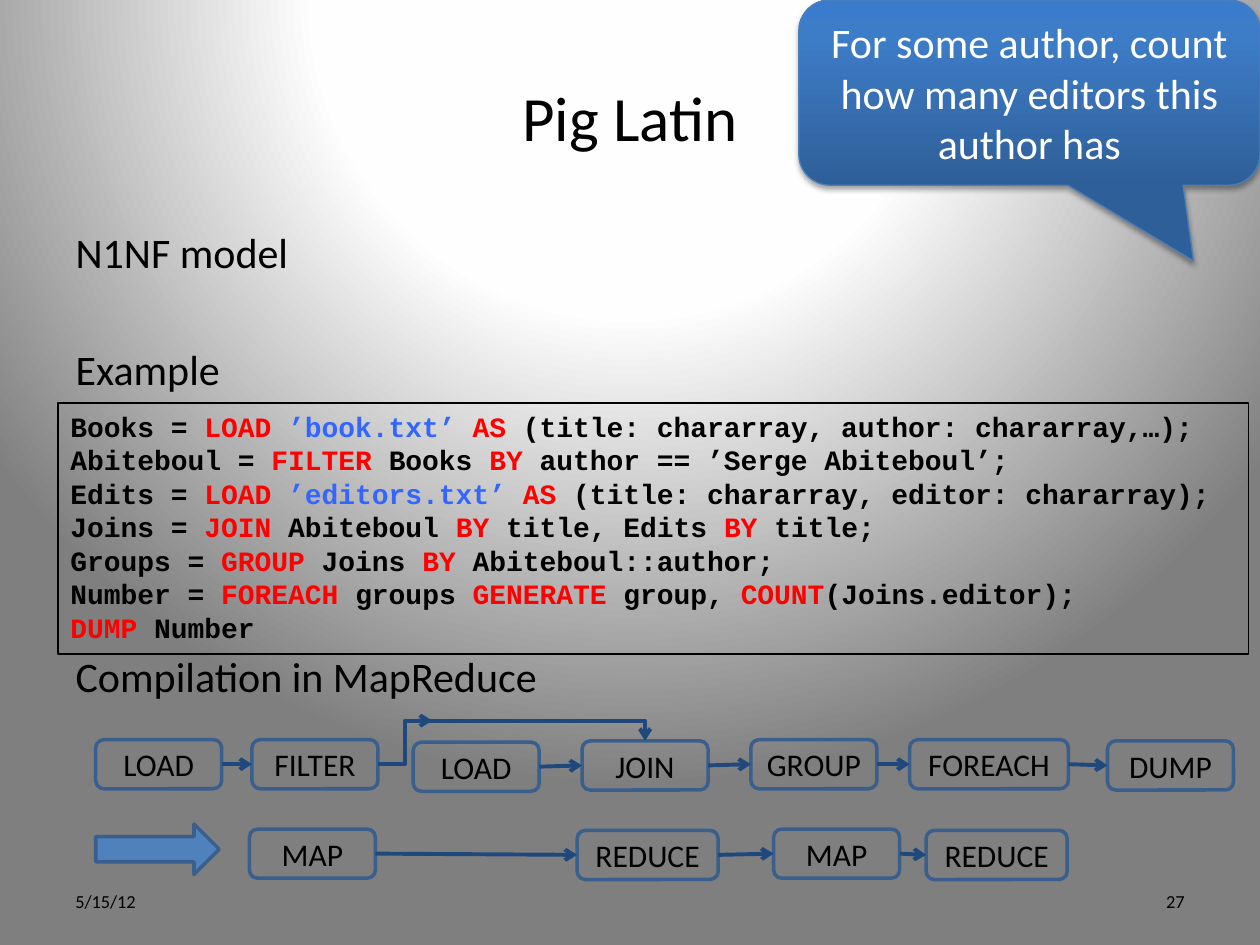
from dataclasses import dataclass

from lxml import etree
from pptx import Presentation
from pptx.dml.color import RGBColor
from pptx.enum.shapes import MSO_CONNECTOR, MSO_SHAPE
from pptx.enum.text import MSO_ANCHOR, MSO_AUTO_SIZE, PP_ALIGN
from pptx.oxml import parse_xml
from pptx.oxml.ns import nsdecls, qn
from pptx.util import Inches, Pt

LEFT, CENTER, RIGHT = PP_ALIGN.LEFT, PP_ALIGN.CENTER, PP_ALIGN.RIGHT
TOP, MIDDLE = MSO_ANCHOR.TOP, MSO_ANCHOR.MIDDLE
STRAIGHT, ELBOW = MSO_CONNECTOR.STRAIGHT, MSO_CONNECTOR.ELBOW

BLACK = RGBColor(0x00, 0x00, 0x00)
WHITE = RGBColor(0xFF, 0xFF, 0xFF)
KEYWORD_RED = RGBColor(0xFF, 0x00, 0x00)
FILE_BLUE = RGBColor(0x33, 0x66, 0xFF)
STAGE_LINE = RGBColor(0x3A, 0x5F, 0x8C)
FLOW_LINE = RGBColor(0x1F, 0x49, 0x7D)
ARROW_FILL = RGBColor(0x4F, 0x81, 0xBD)
CALLOUT_LINE = RGBColor(0x4B, 0x7E, 0xBC)
BACKDROP_STOPS = [(0, WHITE), (40, RGBColor(0xFE, 0xFE, 0xFE)), (100, RGBColor(0x7F, 0x7F, 0x7F))]
CALLOUT_STOPS = [(0, RGBColor(0x2F, 0x5F, 0x99)), (80, RGBColor(0x3D, 0x7C, 0xC7)),
                 (100, RGBColor(0x3A, 0x7C, 0xCB))]

BODY_FONT, CODE_FONT = "Calibri", "Courier New"
COLUMNS, ROWS = 100, 75  # grid cells are a tenth of an inch
CELL = Inches(0.1)
STAGE_HEIGHT = 3.9

# Text between asterisks is a keyword.
PROGRAM = [
    "Books = *LOAD *’book.txt’ *AS *(title: chararray, author: chararray,…);",
    "Abiteboul = *FILTER *Books *BY *author == ’Serge Abiteboul’;",
    "Edits = *LOAD *’editors.txt’ *AS *(title: chararray, editor: chararray);",
    "Joins = *JOIN *Abiteboul *BY *title, Edits *BY *title;",
    "Groups = *GROUP *Joins *BY *Abiteboul::author;",
    "Number = *FOREACH *groups *GENERATE *group, *COUNT*(Joins.editor);",
    "*DUMP* Number",
]
# Heading and the space above it in points
TOPICS = [("N1NF model", 4.8), ("Example", 38), ("Compilation in MapReduce", 146.7)]


@dataclass
class Stage:
    label: str
    column: float
    row: float
    width: float = 10
    feeds_next: bool = True

    @property
    def middle(self) -> float:
        return self.row + STAGE_HEIGHT / 2

    @property
    def right(self) -> float:
        return self.column + self.width


OPERATORS = [
    Stage("LOAD", 7.6, 58.7),
    Stage("FILTER", 20, 58.7, feeds_next=False),
    Stage("LOAD", 32.8, 58.9),
    Stage("JOIN", 46.2, 58.8),
    Stage("GROUP", 59.6, 58.7),
    Stage("FOREACH", 72.2, 58.7, 12.6),
    Stage("DUMP", 87.9, 58.8),
]
JOBS = [
    Stage("MAP", 19.8, 65.8),
    Stage("REDUCE", 45.8, 65.9, 11.2),
    Stage("MAP", 61.4, 65.8),
    Stage("REDUCE", 73.5, 65.9, 11.2),
]


def cells(*counts: float) -> list[int]:
    return [round(count * CELL) for count in counts]


def format_text(frame, size: float, color: RGBColor = BLACK, align=LEFT, anchor=MIDDLE) -> None:
    frame.word_wrap = True
    frame.vertical_anchor = anchor
    for paragraph in frame.paragraphs:
        paragraph.alignment = align
        for run in paragraph.runs:
            run.font.size, run.font.name, run.font.color.rgb = Pt(size), BODY_FONT, color


def gradient_over_solid(parent, stops: list, direction: str) -> None:
    """Replace the solid fill inside parent with a gradient."""
    marks = "".join(f'<a:gs pos="{share * 1000}"><a:srgbClr val="{color}"/></a:gs>'
                    for share, color in stops)
    solid = parent.find(qn("a:solidFill"))
    parent.replace(solid, parse_xml(
        f'<a:gradFill {nsdecls("a")} rotWithShape="1"><a:gsLst>{marks}</a:gsLst>{direction}</a:gradFill>'))


def add_shape(shapes, kind, place: tuple, line: RGBColor, weight: float, fill: RGBColor | None = None):
    shape = shapes.add_shape(kind, *cells(*place))
    shape.shadow.inherit = False
    if fill is None:
        shape.fill.background()
    else:
        shape.fill.solid()
        shape.fill.fore_color.rgb = fill
    shape.line.color.rgb, shape.line.width = line, Pt(weight)
    return shape


def add_flow(shapes, start: tuple, end: tuple, kind=STRAIGHT):
    flow = shapes.add_connector(kind, *cells(*start, *end))
    flow.line.color.rgb, flow.line.width = FLOW_LINE, Pt(2.25)
    etree.SubElement(flow.line._get_or_add_ln(), qn("a:tailEnd")).set("type", "arrow")
    etree.SubElement(flow._element.spPr, qn("a:effectLst"))
    return flow


def add_pipeline(shapes, stages: list[Stage]) -> None:
    for stage in stages:
        box = add_shape(shapes, MSO_SHAPE.ROUNDED_RECTANGLE,
                        (stage.column, stage.row, stage.width, STAGE_HEIGHT), STAGE_LINE, 2)
        box.text_frame.text = stage.label
        format_text(box.text_frame, 18, align=CENTER)
    for stage, following in zip(stages, stages[1:]):
        if stage.feeds_next:
            add_flow(shapes, (stage.right, stage.middle), (following.column, following.middle))


def add_program(shapes) -> None:
    frame = add_shape(shapes, MSO_SHAPE.RECTANGLE, (4.6, 32, 94.5, 19.9), BLACK, 1).text_frame
    for number, statement in enumerate(PROGRAM):
        paragraph = frame.paragraphs[0] if number == 0 else frame.add_paragraph()
        paragraph.line_spacing = Pt(19.15)
        for index, part in enumerate(statement.split("*")):
            if not part:
                continue
            run = paragraph.add_run()
            run.text = part
    format_text(frame, 16, anchor=TOP)
    for statement, paragraph in zip(PROGRAM, frame.paragraphs):
        keywords = statement.split("*")[1::2]
        for run in paragraph.runs:
            run.font.name, run.font.bold = CODE_FONT, True
            if run.text in keywords:
                run.font.color.rgb = KEYWORD_RED
            elif ".txt" in run.text:
                run.font.color.rgb = FILE_BLUE


def add_callout(shapes) -> None:
    callout = add_shape(shapes, MSO_SHAPE.ROUNDED_RECTANGULAR_CALLOUT,
                        (63.4, 0, 36.6, 14.7), CALLOUT_LINE, 0.75, WHITE)
    for index, share in enumerate((0.356, 0.909, 0.167)):
        callout.adjustments[index] = share
    properties = callout._element.spPr
    gradient_over_solid(properties, CALLOUT_STOPS, '<a:lin ang="16200000" scaled="0"/>')
    properties.find(qn("a:effectLst")).append(parse_xml(
        f'<a:outerShdw {nsdecls("a")} blurRad="{Pt(3.1)}" dist="{Pt(1.8)}" dir="5400000" rotWithShape="0">'
        '<a:srgbClr val="000000"><a:alpha val="35000"/></a:srgbClr></a:outerShdw>'))
    callout.text_frame.text = "For some author, count how many editors this author has"
    format_text(callout.text_frame, 24, WHITE, CENTER)


def fill_placeholders(slide) -> None:
    title, body = slide.shapes.title, slide.placeholders[1]
    title.left, title.top, title.width, title.height = cells(5, 3, 90, 12.5)
    title.text_frame.text = "Pig Latin"
    format_text(title.text_frame, 36, align=CENTER)

    body.left, body.top, body.width, body.height = cells(5, 17.5, 90, 40.5)
    body.text_frame.text = "\n".join(topic for topic, _ in TOPICS)
    format_text(body.text_frame, 24, anchor=TOP)
    body.text_frame.auto_size = MSO_AUTO_SIZE.NONE
    for paragraph, (_, space) in zip(body.text_frame.paragraphs, TOPICS):
        paragraph.space_before = Pt(space)
        properties = paragraph._p.get_or_add_pPr()
        properties.set("marL", "0")
        properties.set("indent", "0")
        etree.SubElement(properties, qn("a:buNone"))


def main() -> None:
    deck = Presentation()
    deck.slide_width, deck.slide_height = cells(COLUMNS, ROWS)
    slide = deck.slides.add_slide(deck.slide_layouts[1])
    slide.background.fill.solid()
    slide.background.fill.fore_color.rgb = WHITE
    gradient_over_solid(
        slide._element.cSld.bg.bgPr, BACKDROP_STOPS,
        '<a:path path="circle"><a:fillToRect l="50000" t="-80000" r="50000" b="180000"/></a:path>')
    fill_placeholders(slide)
    add_program(slide.shapes)

    operators = slide.shapes.add_group_shape().shapes
    add_pipeline(operators, OPERATORS)
    source, join = OPERATORS[1], OPERATORS[3]
    bypass_row = 57.2
    add_flow(operators, (source.right, source.middle), (34.3, bypass_row), ELBOW)
    bypass = add_flow(operators, (32.8, bypass_row), (join.column + join.width / 2, join.row), ELBOW)
    bypass._element.spPr.find(qn("a:prstGeom")).set("prst", "bentConnector2")

    jobs = slide.shapes.add_group_shape().shapes
    add_pipeline(jobs, JOBS)
    add_shape(jobs, MSO_SHAPE.RIGHT_ARROW, (7.6, 65.4, 9.8, 4), STAGE_LINE, 2, ARROW_FILL)

    add_callout(slide.shapes)
    for text, column, align in (("5/15/12", 5, LEFT), ("27", 71.7, RIGHT)):
        footer = slide.shapes.add_textbox(*cells(column, 69.5, 23.3, 4)).text_frame
        footer.text = text
        format_text(footer, 10.5, align=align)
    deck.save("out.pptx")


if __name__ == "__main__":
    main()
